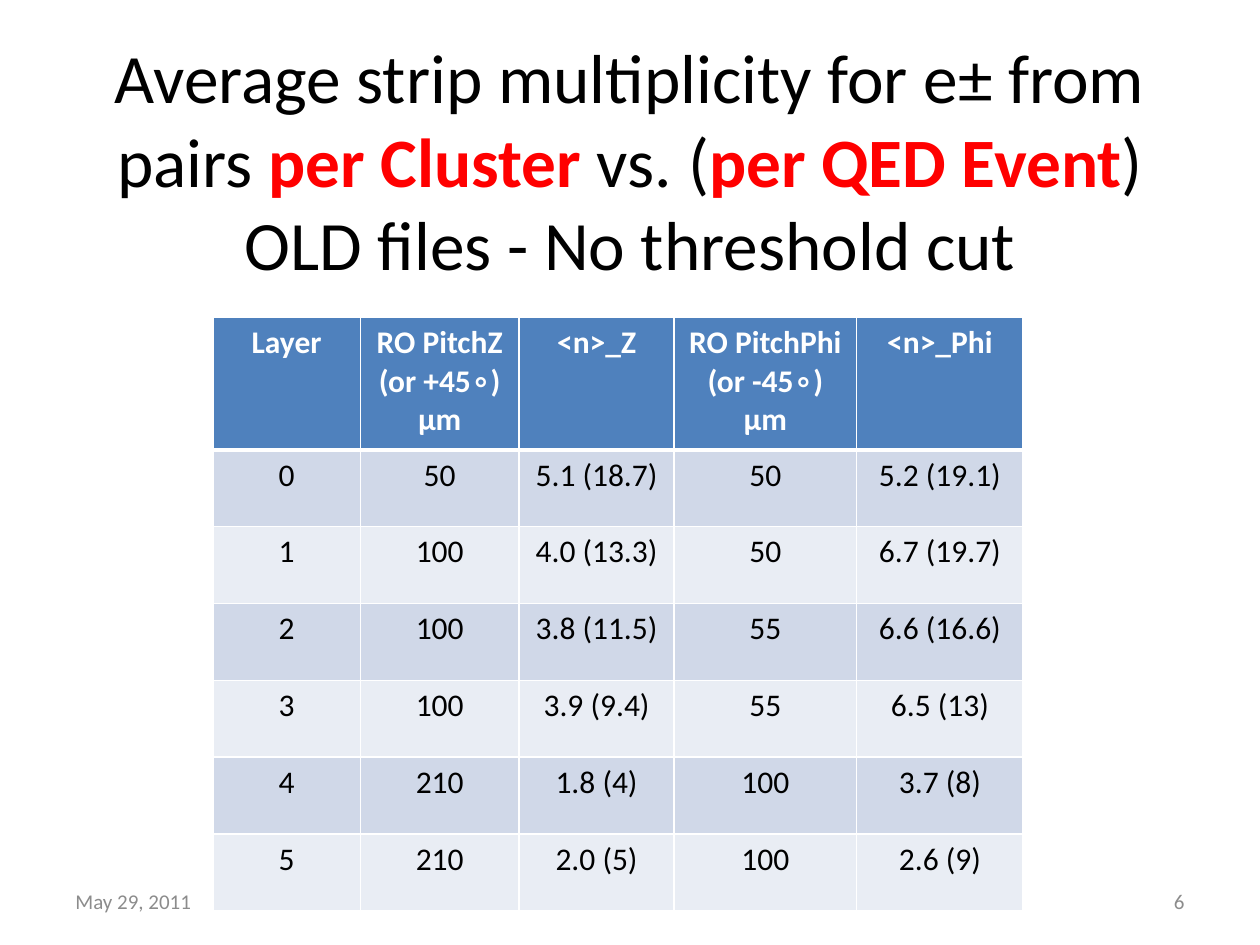
import pptx
import pptx.dml.color
import pptx.enum.text
import pptx.oxml
import pptx.oxml.ns
import pptx.util
from pptx.dml.color import RGBColor
from pptx.enum.text import MSO_ANCHOR, PP_ALIGN
from pptx.util import Inches

BLACK = RGBColor(0x00, 0x00, 0x00)
WHITE = RGBColor(0xFF, 0xFF, 0xFF)
RED = RGBColor(0xFF, 0x00, 0x00)
GRAY = RGBColor(0x8C, 0x8C, 0x8C)
HEADER_BLUE = RGBColor(0x4F, 0x81, 0xBD)
BANDS = (RGBColor(0xD0, 0xD8, 0xE8), RGBColor(0xE9, 0xED, 0xF4))

TITLE_LINES = [
    [
        ("Average strip multiplicity for e± from pairs ", False),
        ("per Cluster ", True),
        ("vs. (", False),
        ("per QED Event", True),
        (")", False),
    ],
    [("OLD files - No threshold cut", False)],
]
COLUMN_WIDTHS = [1.17, 1.26, 1.23, 1.45, 1.32]
HEADER_HEIGHT = 1.05
ROW_HEIGHT = 0.61
ROWS = [
    ["Layer", "RO PitchZ\n(or +45∘)\nμm", "<n>_Z", "RO PitchPhi\n(or -45∘)\nμm", "<n>_Phi"],
    ["0", "50", "5.1 (18.7)", "50", "5.2 (19.1)"],
    ["1", "100", "4.0 (13.3)", "50", "6.7 (19.7)"],
    ["2", "100", "3.8 (11.5)", "55", "6.6 (16.6)"],
    ["3", "100", "3.9 (9.4)", "55", "6.5 (13)"],
    ["4", "210", "1.8 (4)", "100", "3.7 (8)"],
    ["5", "210", "2.0 (5)", "100", "2.6 (9)"],
]


class SlideBuilder:
    """Adds consistently styled elements to one slide."""

    font_name = "Calibri"

    def __init__(self, slide):
        self.slide = slide

    def run(self, paragraph, text, size, color, bold=False):
        run = paragraph.add_run()
        run.text = text
        run.font.name = self.font_name
        run.font.size = pptx.util.Pt(size)
        run.font.color.rgb = color
        run.font.bold = bold

    def title(self, lines, left, top, width, height):
        shape = self.slide.shapes.title
        shape.left, shape.top = Inches(left), Inches(top)
        shape.width, shape.height = Inches(width), Inches(height)
        frame = shape.text_frame
        frame.word_wrap = True
        frame.auto_size = pptx.enum.text.MSO_AUTO_SIZE.NONE
        frame.vertical_anchor = MSO_ANCHOR.MIDDLE
        paragraph = frame.paragraphs[0]
        paragraph.alignment = PP_ALIGN.CENTER
        for index, line in enumerate(lines):
            if index:
                paragraph.add_line_break()
            for text, emphasized in line:
                self.run(paragraph, text, 39.6, RED if emphasized else BLACK, emphasized)

    def footer(self, text, left, alignment):
        shape = self.slide.shapes.add_textbox(
            Inches(left), Inches(6.95), Inches(2.33), Inches(0.4)
        )
        frame = shape.text_frame
        frame.word_wrap = True
        frame.vertical_anchor = MSO_ANCHOR.MIDDLE
        paragraph = frame.paragraphs[0]
        paragraph.alignment = alignment
        self.run(paragraph, text, 12, GRAY)

    def borders(self, cell, top, bottom):
        properties = cell._tc.get_or_add_tcPr()
        widths = {"lnL": 1, "lnR": 1, "lnT": top, "lnB": bottom}
        for index, (tag, width) in enumerate(widths.items()):
            border = pptx.oxml.parse_xml(
                f'<a:{tag} {pptx.oxml.ns.nsdecls("a")} w="{pptx.util.Pt(width)}">'
                f'<a:solidFill><a:srgbClr val="{WHITE}"/></a:solidFill></a:{tag}>'
            )
            properties.insert(index, border)

    def cell(self, cell, text, is_header, fill):
        cell.fill.solid()
        cell.fill.fore_color.rgb = fill
        frame = cell.text_frame
        for index, line in enumerate(text.split("\n")):
            paragraph = frame.add_paragraph() if index else frame.paragraphs[0]
            paragraph.alignment = PP_ALIGN.CENTER
            self.run(paragraph, line, 18, WHITE if is_header else BLACK, is_header)

    def table(self, rows, left, top):
        heights = [HEADER_HEIGHT] + [ROW_HEIGHT] * (len(rows) - 1)
        table = self.slide.shapes.add_table(
            len(rows), len(COLUMN_WIDTHS), Inches(left), Inches(top),
            Inches(sum(COLUMN_WIDTHS)), Inches(sum(heights)),
        ).table
        for column, width in zip(table.columns, COLUMN_WIDTHS):
            column.width = Inches(width)
        for index, (texts, height) in enumerate(zip(rows, heights)):
            table.rows[index].height = Inches(height)
            is_header = index == 0
            fill = HEADER_BLUE if is_header else BANDS[(index - 1) % 2]
            for cell, text in zip(table.rows[index].cells, texts):
                self.cell(cell, text, is_header, fill)
                self.borders(cell, 3 if index == 1 else 1, 3 if is_header else 1)


def main():
    presentation = pptx.Presentation()
    presentation.slide_width, presentation.slide_height = Inches(10), Inches(7.5)
    slide = presentation.slides.add_slide(presentation.slide_layouts[5])
    builder = SlideBuilder(slide)
    builder.title(TITLE_LINES, 0.5, 0.33, 9, 1.87)
    builder.footer("May 29, 2011", 0.5, PP_ALIGN.LEFT)
    builder.footer("6", 7.17, PP_ALIGN.RIGHT)
    builder.table(ROWS, 1.69, 2.52)
    presentation.save("out.pptx")


if __name__ == "__main__":
    main()
